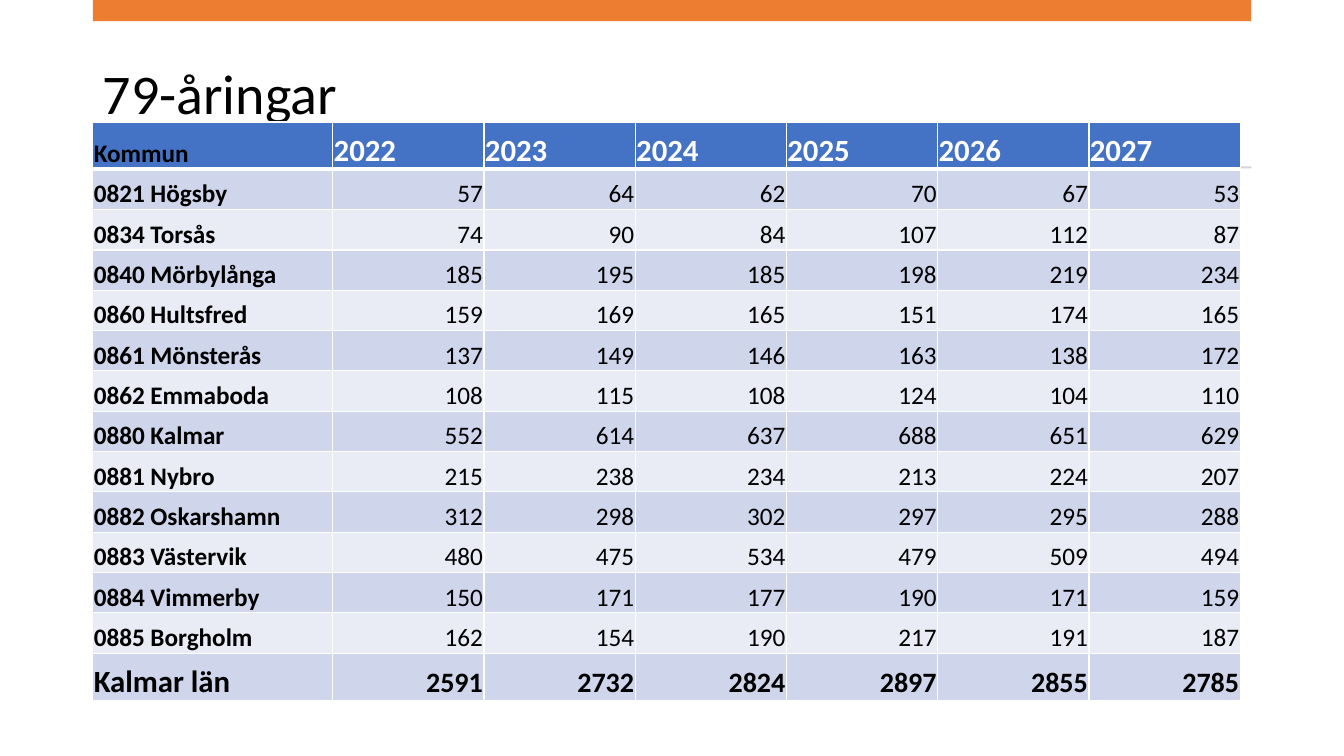
from lxml import etree
from pptx import Presentation
from pptx import util as u
from pptx.dml.color import RGBColor
from pptx.enum import shapes, text
from pptx.oxml import ns

COLORS = {
    "accent": "ED7D31",
    "rule": "D5D5D5",
    "header": "4472C4",
    "odd": "CFD5EA",
    "even": "E9EBF5",
    "white": "FFFFFF",
    "black": "000000",
}
FONT = "Calibri"
MARGIN, CONTENT_WIDTH = 0.92, 11.49
TABLE_TOP = 1.21
NAME_WIDTH, YEAR_WIDTH = 2.38, 1.5
END_ROW, BODY_ROW = 0.47, 0.4

YEARS = range(2022, 2028)
MUNICIPALITIES = {
    "0821 Högsby": (57, 64, 62, 70, 67, 53),
    "0834 Torsås": (74, 90, 84, 107, 112, 87),
    "0840 Mörbylånga": (185, 195, 185, 198, 219, 234),
    "0860 Hultsfred": (159, 169, 165, 151, 174, 165),
    "0861 Mönsterås": (137, 149, 146, 163, 138, 172),
    "0862 Emmaboda": (108, 115, 108, 124, 104, 110),
    "0880 Kalmar": (552, 614, 637, 688, 651, 629),
    "0881 Nybro": (215, 238, 234, 213, 224, 207),
    "0882 Oskarshamn": (312, 298, 302, 297, 295, 288),
    "0883 Västervik": (480, 475, 534, 479, 509, 494),
    "0884 Vimmerby": (150, 171, 177, 190, 171, 159),
    "0885 Borgholm": (162, 154, 190, 217, 191, 187),
}
COUNTY = (2591, 2732, 2824, 2897, 2855, 2785)


def rgb(name):
    return RGBColor.from_string(COLORS[name])


def add_run(paragraph, words, size, color="black", bold=False):
    run = paragraph.add_run()
    run.text = words
    run.font.name = FONT
    run.font.size = u.Pt(size)
    run.font.bold = bold
    run.font.color.rgb = rgb(color)


def set_title(slide, words):
    title = slide.shapes.title
    title.left, title.top = u.Inches(MARGIN), u.Inches(0.37)
    title.width, title.height = u.Inches(CONTENT_WIDTH), u.Inches(1.18)
    title.text_frame.vertical_anchor = text.MSO_ANCHOR.MIDDLE
    title.text_frame.word_wrap = True
    heading = title.text_frame.paragraphs[0]
    heading.alignment = text.PP_ALIGN.LEFT
    heading.line_spacing = 0.9
    add_run(heading, words, 40)


def add_bar(slide, top, height, color):
    bar = slide.shapes.add_shape(
        shapes.MSO_SHAPE.RECTANGLE,
        u.Inches(MARGIN), u.Inches(top), u.Inches(CONTENT_WIDTH), u.Inches(height),
    )
    bar.shadow.inherit = False
    bar.fill.solid()
    bar.fill.fore_color.rgb = rgb(color)
    bar.line.fill.background()


def set_borders(cell, top=1, bottom=1):
    properties = cell._tc.get_or_add_tcPr()
    widths = {"lnL": 1, "lnR": 1, "lnT": top, "lnB": bottom}
    for position, (side, width) in enumerate(widths.items()):
        line = etree.Element(ns.qn(f"a:{side}"), w=str(u.Pt(width)))
        fill = etree.SubElement(line, ns.qn("a:solidFill"))
        etree.SubElement(fill, ns.qn("a:srgbClr"), val=COLORS["white"])
        properties.insert(position, line)


def fill_cell(cell, words, background, size, color, bold, align):
    cell.margin_left = cell.margin_right = cell.margin_top = u.Inches(0.01)
    cell.margin_bottom = 0
    cell.vertical_anchor = text.MSO_ANCHOR.BOTTOM
    cell.fill.solid()
    cell.fill.fore_color.rgb = rgb(background)
    paragraph = cell.text_frame.paragraphs[0]
    paragraph.alignment = align
    add_run(paragraph, words, size, color, bold)


def add_population_table(slide):
    rows = [("Kommun", *YEARS)]
    rows += [(name, *counts) for name, counts in MUNICIPALITIES.items()]
    rows.append(("Kalmar län", *COUNTY))
    last = len(rows) - 1
    widths = [NAME_WIDTH] + [YEAR_WIDTH] * len(YEARS)
    heights = [END_ROW] + [BODY_ROW] * len(MUNICIPALITIES) + [END_ROW]
    table = slide.shapes.add_table(
        len(rows), len(widths), u.Inches(MARGIN), u.Inches(TABLE_TOP),
        u.Inches(sum(widths)), u.Inches(sum(heights)),
    ).table
    for column, width in zip(table.columns, widths):
        column.width = u.Inches(width)
    for row, height in zip(table.rows, heights):
        row.height = u.Inches(height)
    for r, values in enumerate(rows):
        background = "header" if r == 0 else "odd" if r % 2 else "even"
        for c, value in enumerate(values):
            is_year = r == 0 and c > 0
            is_count = r > 0 and c > 0
            size = 18
            if is_year or (r == last and c == 0):
                size = 22
            elif r == last:
                size = 20
            cell = table.cell(r, c)
            fill_cell(
                cell, str(value), background, size,
                color="white" if is_year else "black",
                bold=not is_count or r == last,
                align=text.PP_ALIGN.RIGHT if is_count else text.PP_ALIGN.LEFT,
            )
            set_borders(cell, top=3 if r == 1 else 1, bottom=3 if r == 0 else 1)


def main():
    deck = Presentation()
    deck.slide_width, deck.slide_height = u.Inches(13.33), u.Inches(7.5)
    slide = deck.slides.add_slide(deck.slide_layouts[5])
    set_title(slide, "79-åringar")
    add_bar(slide, 0, 0.21, "accent")
    add_bar(slide, 1.65, 0.02, "rule")
    add_population_table(slide)
    deck.save("out.pptx")


if __name__ == "__main__":
    main()
